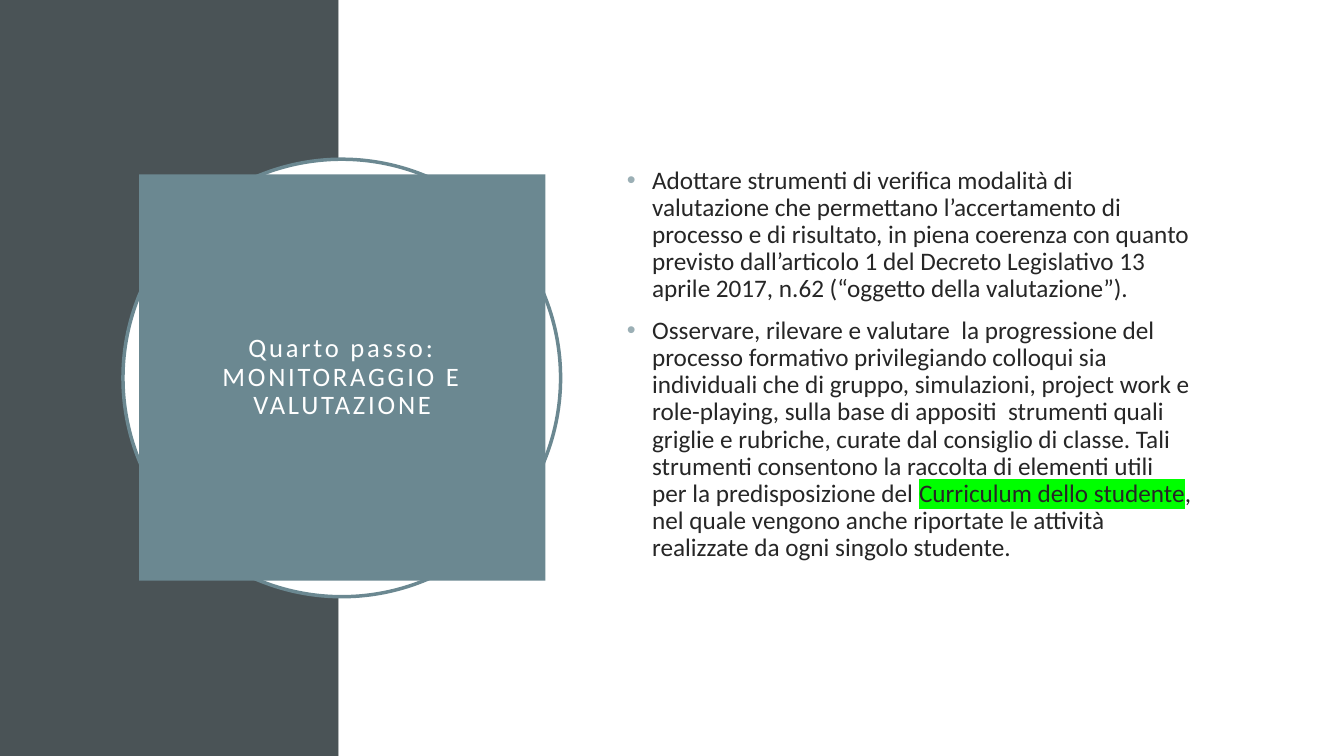
from copy import deepcopy
from dataclasses import dataclass

from lxml import etree
from pptx import Presentation
from pptx.dml.color import RGBColor as Rgb
from pptx.enum.shapes import MSO_SHAPE as Shape
from pptx.enum.text import MSO_ANCHOR as Anchor, MSO_AUTO_SIZE as AutoSize, PP_ALIGN as Align
from pptx.oxml.ns import qn
from pptx.util import Inches, Pt


@dataclass(frozen=True)
class Theme:
    font: str = "Calibri"
    title_size: int = 19
    body_size: int = 18
    white: str = "FFFFFF"
    dark: str = "4A5356"
    teal: str = "6B8891"
    ink: str = "262626"
    bullet: str = "9BAFB5"
    highlight: str = "00FF00"


theme = Theme()


def add_panel(kind, left, top, width, height, fill):
    panel = page.shapes.add_shape(kind, Inches(left), Inches(top), Inches(width), Inches(height))
    panel.shadow.inherit = False
    panel.fill.solid()
    panel.fill.fore_color.rgb = Rgb.from_string(fill)
    panel.line.fill.background()
    return panel


def style_span(span, size, color):
    span.font.name = theme.font
    span.font.size = Pt(size)
    span.font.color.rgb = Rgb.from_string(color)


deck = Presentation()
deck.slide_width, deck.slide_height = Inches(13.33), Inches(7.5)
page = deck.slides.add_slide(deck.slide_layouts[5])

# Background panels and ring
add_panel(Shape.RECTANGLE, 0, 0, 3.36, 7.5, theme.dark)
add_panel(Shape.RECTANGLE, 3.36, 0, 9.97, 7.5, theme.white)
ring = add_panel(Shape.OVAL, 1.22, 1.58, 4.34, 4.34, theme.white)
ring.line.color.rgb = Rgb.from_string(theme.teal)
ring.line.width = Pt(2.5)

# Title square, brought in front of the ring
title = page.shapes.title
page.shapes._spTree.append(title._element)
title.left, title.top = Inches(1.38), Inches(1.73)
title.width = title.height = Inches(4.03)
title.fill.solid()
title.fill.fore_color.rgb = Rgb.from_string(theme.teal)
frame = title.text_frame
frame.word_wrap = True
frame.auto_size = AutoSize.NONE
frame.vertical_anchor = Anchor.MIDDLE
frame.margin_left = frame.margin_right = Inches(0.2)
frame.margin_top = frame.margin_bottom = Inches(0.2)
para = frame.paragraphs[0]
para.text = "Quarto passo:\vMONITORAGGIO E VALUTAZIONE"
para.alignment = Align.CENTER
para.line_spacing = 0.9
for span in para.runs:
    style_span(span, theme.title_size, theme.white)
    span.font._element.set("spc", "200")
line_break = para._p.find(qn("a:br"))
line_break.append(deepcopy(para.runs[0].font._element))

# Body text: each paragraph is a list of (text, highlighted) spans
body = [
    [("Adottare strumenti di verifica modalità di valutazione che permettano l’accertamento di "
      "processo e di risultato, in piena coerenza con quanto previsto dall’articolo 1 del Decreto "
      "Legislativo 13 aprile 2017, n.62 (“oggetto della valutazione”).", False)],
    [("Osservare, rilevare e valutare  la progressione del processo formativo privilegiando "
      "colloqui sia individuali che di gruppo, simulazioni, project work e role-playing, sulla "
      "base di appositi  strumenti quali  griglie e rubriche, curate dal consiglio di classe. "
      "Tali strumenti consentono la raccolta di elementi utili per la predisposizione del ", False),
     ("Curriculum dello studente", True),
     (", nel quale vengono anche riportate le attività realizzate da ogni singolo studente.", False)],
]
box = page.shapes.add_textbox(Inches(6.12), Inches(1.66), Inches(5.8), Inches(4.3))
frame = box.text_frame
frame.word_wrap = True
frame.vertical_anchor = Anchor.TOP
frame.margin_top = 0
for index, spans in enumerate(body):
    para = frame.add_paragraph() if index else frame.paragraphs[0]
    para.line_spacing = 0.9
    para.space_before = Pt(10)

    # Hanging bullet
    props = para._p.get_or_add_pPr()
    props.set("marL", str(Inches(0.25)))
    props.set("indent", str(-Inches(0.25)))
    bullet_color = etree.SubElement(props, qn("a:buClr"))
    etree.SubElement(bullet_color, qn("a:srgbClr"), val=theme.bullet)
    etree.SubElement(props, qn("a:buFont"), typeface="Arial")
    etree.SubElement(props, qn("a:buChar"), char="•")

    for text, highlighted in spans:
        span = para.add_run()
        span.text = text
        style_span(span, theme.body_size, theme.ink)
        if highlighted:
            marker = etree.Element(qn("a:highlight"))
            etree.SubElement(marker, qn("a:srgbClr"), val=theme.highlight)
            span.font._element.find(qn("a:solidFill")).addnext(marker)

deck.save("out.pptx")
